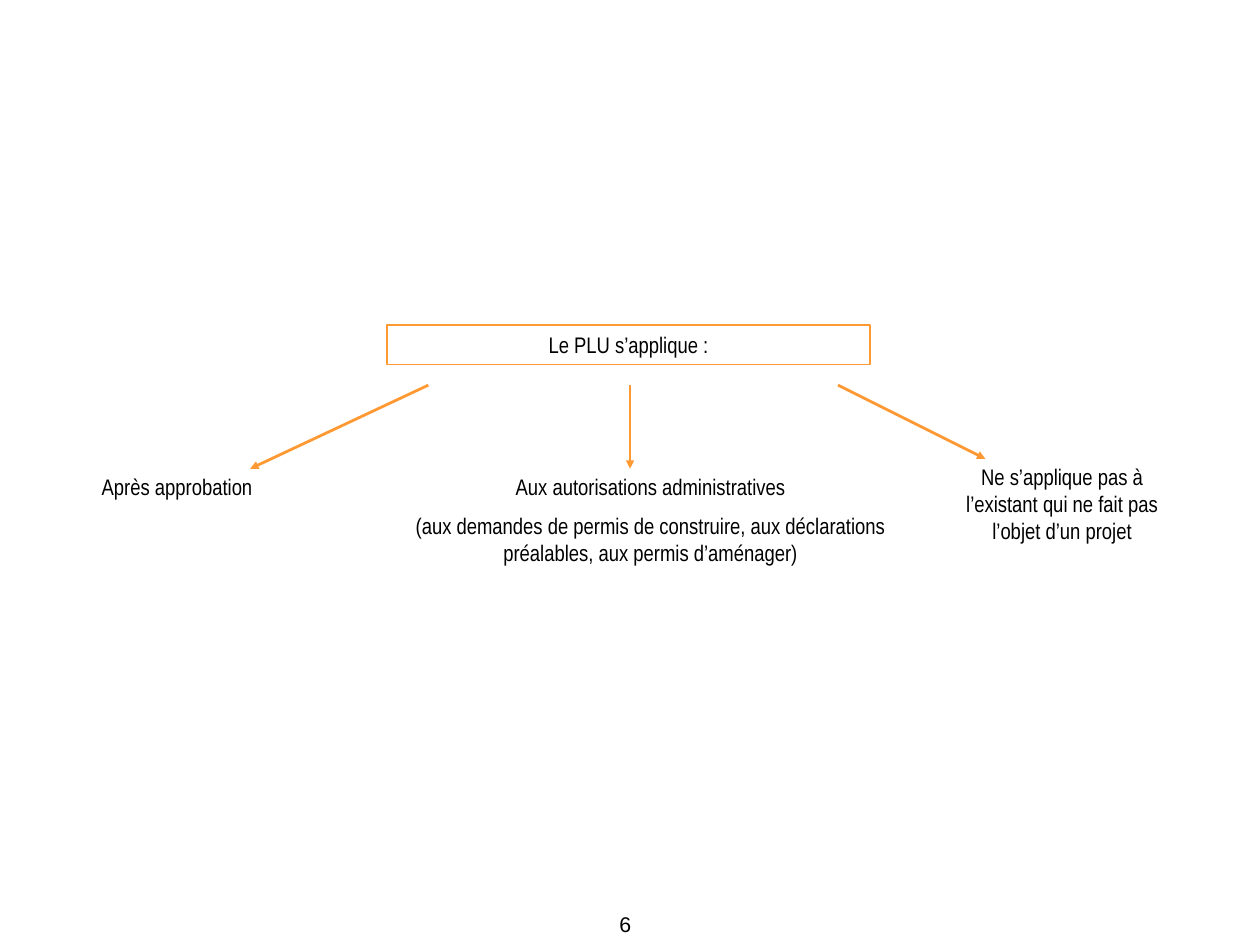
import pptx
import pptx.dml.color
import pptx.enum.shapes
import pptx.enum.text
import pptx.oxml.ns
import pptx.util
from lxml import etree

Cm = pptx.util.Cm
Pt = pptx.util.Pt
ALIGN = pptx.enum.text.PP_ALIGN
ORANGE = "FF9933"
BLACK = "000000"


def color(value):
    return pptx.dml.color.RGBColor.from_string(value)


def write_text(shape, lines, alignment, font_name="Arial Narrow", size=18, margins=(0.25, 0.13), wrap=True):
    frame = shape.text_frame
    frame.word_wrap = wrap
    frame.vertical_anchor = pptx.enum.text.MSO_ANCHOR.TOP
    frame.margin_left = frame.margin_right = Cm(margins[0])
    frame.margin_top = frame.margin_bottom = Cm(margins[1])
    frame.text = "\n".join(lines)
    for index, paragraph in enumerate(frame.paragraphs):
        paragraph.alignment = alignment
        if index:
            paragraph.space_before = Pt(size / 2)
        paragraph.font.name = font_name
        paragraph.font.size = Pt(size)
        paragraph.font.color.rgb = color(BLACK)


def add_heading(slide, left, top, width, height):
    shape = slide.shapes.add_shape(
        pptx.enum.shapes.MSO_SHAPE.RECTANGLE, Cm(left), Cm(top), Cm(width), Cm(height))
    shape.shadow.inherit = False
    shape.fill.background()
    shape.line.color.rgb = color(ORANGE)
    shape.line.width = Pt(1.25)
    write_text(shape, ["Le PLU s’applique :"], ALIGN.CENTER, margins=(0.36, 0.18))


def add_arrow(slide, start_x, start_y, end_x, end_y):
    arrow = slide.shapes.add_connector(
        pptx.enum.shapes.MSO_CONNECTOR.STRAIGHT, Cm(start_x), Cm(start_y), Cm(end_x), Cm(end_y))
    arrow.line.color.rgb = color(ORANGE)
    arrow.line.width = Pt(2.25)
    properties = arrow.element.spPr
    etree.SubElement(arrow.line._get_or_add_ln(), pptx.oxml.ns.qn("a:tailEnd"), type="triangle")
    etree.SubElement(properties, pptx.oxml.ns.qn("a:effectLst"))


def add_branch(slide, left, top, width, height, arrow_start, arrow_end, arrow_drop, lines, alignment):
    text_top = top + arrow_drop
    add_arrow(slide, left + arrow_start, top, left + arrow_end, text_top)
    label = slide.shapes.add_textbox(
        Cm(left), Cm(text_top), Cm(width), Cm(height - arrow_drop))
    write_text(label, lines, alignment)


def add_page_number(slide, left, top, width, height):
    number = slide.shapes.add_textbox(Cm(left), Cm(top), Cm(width), Cm(height))
    write_text(number, ["6"], ALIGN.LEFT, "Arial", 17, margins=(0.36, 0.18), wrap=False)


def main():
    presentation = pptx.Presentation()
    presentation.slide_width = Cm(35.56)
    presentation.slide_height = Cm(26.67)
    slide = presentation.slides.add_slide(presentation.slide_layouts[6])

    add_heading(slide, 10.92, 9.17, 13.64, 1.12)
    branch_top = 10.87
    add_branch(slide, 2.62, branch_top, 9.19, 3.38, 9.47, 4.44, 2.36,
               ["Après approbation"], ALIGN.LEFT)
    add_branch(slide, 11.25, branch_top, 14.22, 5.31, 6.53, 6.53, 2.36,
               ["Aux autorisations administratives",
                "(aux demandes de permis de construire, aux déclarations préalables, "
                "aux permis d’aménager)"], ALIGN.CENTER)
    add_branch(slide, 26.57, branch_top, 6.81, 4.65, -2.92, 1.24, 2.08,
               ["Ne s’applique pas à l’existant qui ne fait pas l’objet d’un projet"], ALIGN.CENTER)
    add_page_number(slide, 17.12, 25.53, 1.07, 1.09)

    presentation.save("out.pptx")


if __name__ == "__main__":
    main()
